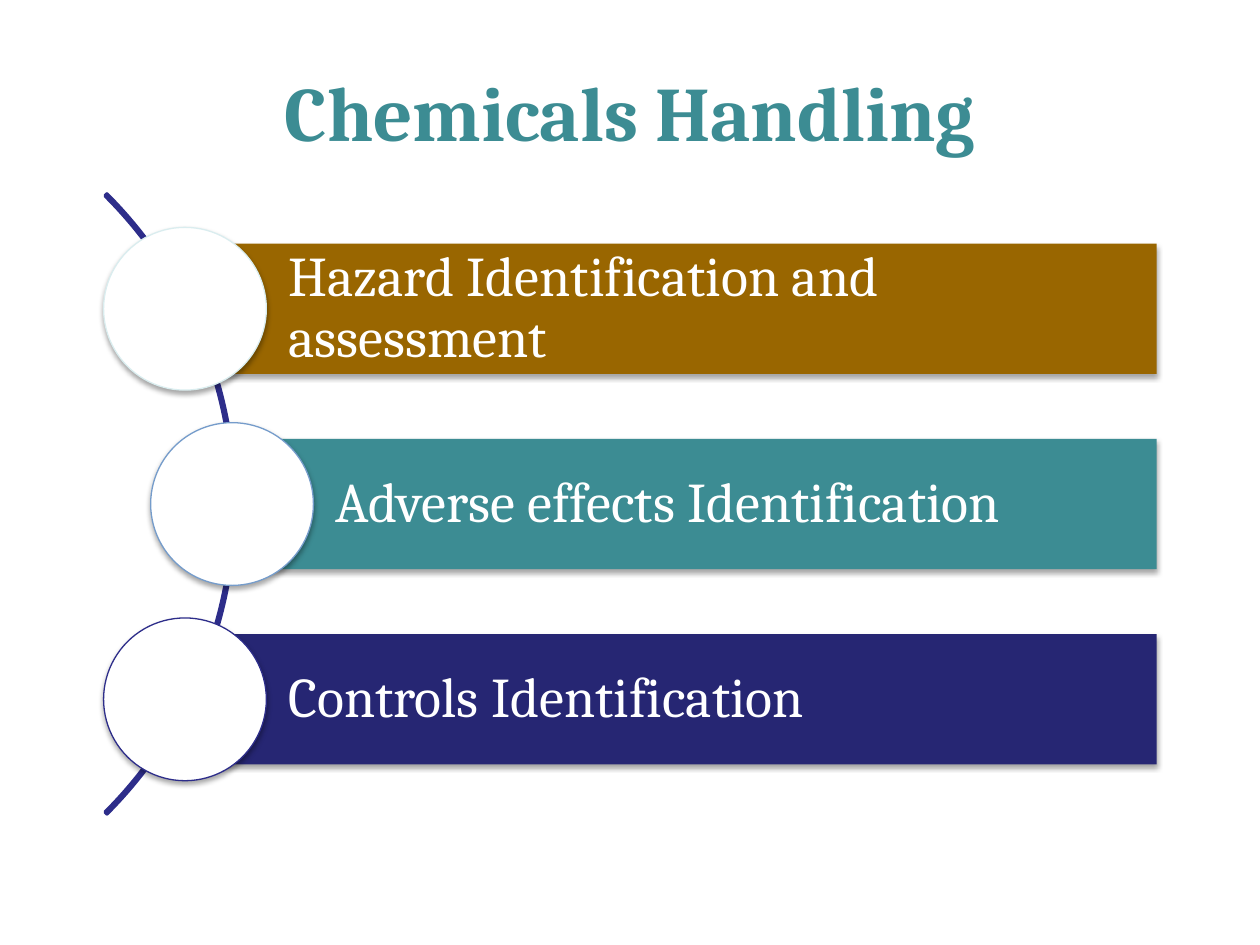
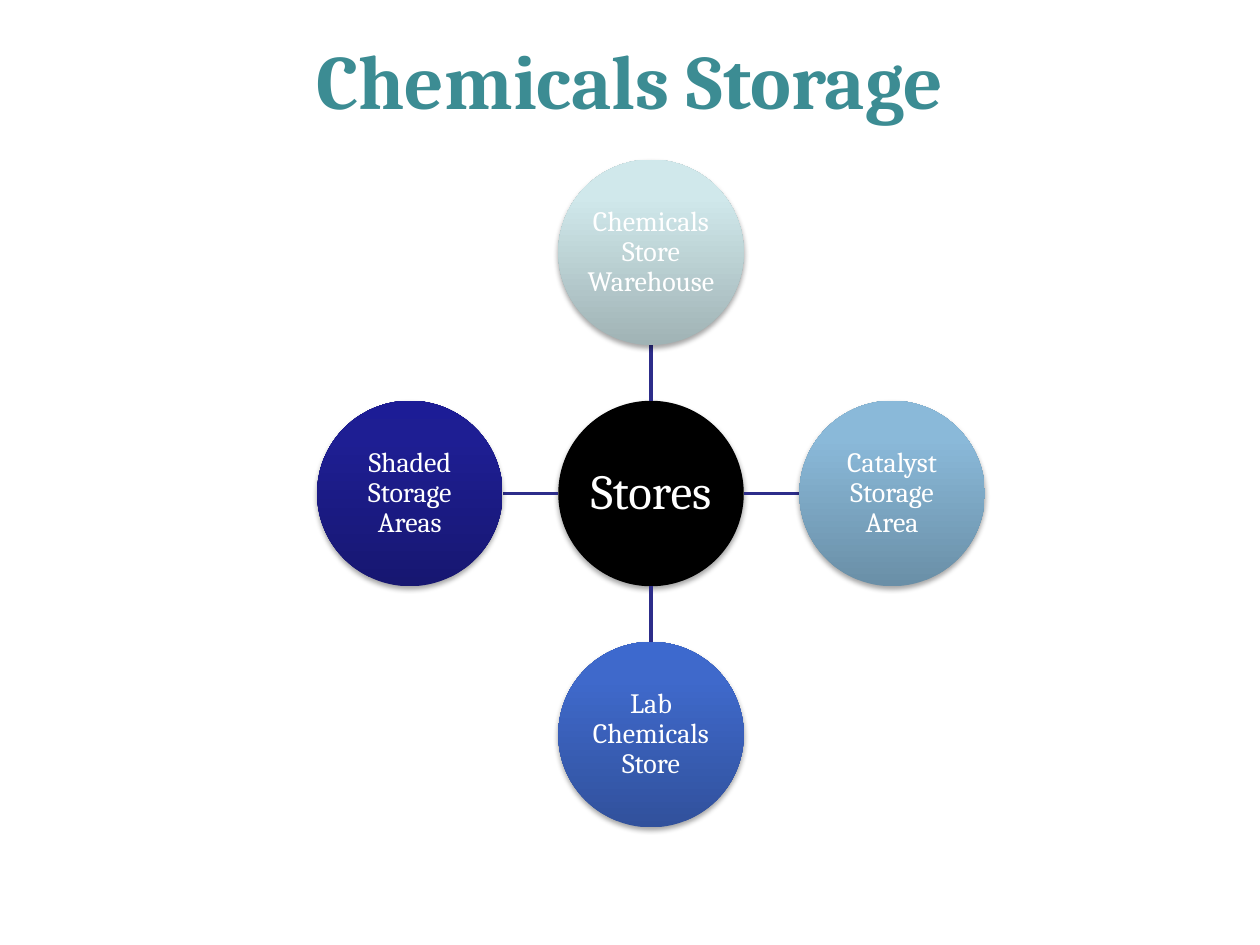
from copy import deepcopy
from dataclasses import dataclass

from lxml import etree
from pptx import Presentation
from pptx.dml.color import RGBColor
from pptx.enum import shapes, text
from pptx.oxml.ns import qn
from pptx.util import Pt


@dataclass(frozen=True)
class Theme:
    font: str = "Cambria"
    teal: str = "3C8C93"
    navy: str = "2D2D8A"
    white: str = "FFFFFF"
    black: str = "000000"
    title_size: float = 44
    bar_size: float = 32
    hub_size: float = 28
    node_size: float = 16
    line_width: float = 2
    outline_width: float = 0.75


@dataclass(frozen=True)
class Step:
    label: str
    left: float
    fill: str
    outline: str


@dataclass(frozen=True)
class Store:
    label: str
    dx: int
    dy: int
    gradient: tuple[str, str, str]


THEME = Theme()
MIDDLE = text.MSO_ANCHOR.MIDDLE
CENTER = text.PP_ALIGN.CENTER
LEFT = text.PP_ALIGN.LEFT

STEPS = (
    Step("Hazard Identification and assessment", 105.7, "996600", "DAEDEF"),
    Step("Adverse effects Identification", 132.6, THEME.teal, "759CCB"),
    Step("Controls Identification", 105.7, "262673", THEME.navy),
)
ARC_LEFT, ARC_SIZE, ARC_MIDDLE = -366.5, 501, 288
BAR_RIGHT, BAR_HEIGHT, STEP_PITCH, DISC_SIZE = 661, 74.4, 111.6, 93

STORES = (
    Store("Chemicals Store Warehouse", 0, -1, ("A0B3B5", "D0E8EB", "D1EAEC")),
    Store("Catalyst Storage Area", 1, 0, ("6A8FA7", "8AB9D9", "89BADB")),
    Store("Lab Chemicals Store", 0, 1, ("31519C", "3F69CB", "3D69CE")),
    Store("Shaded Storage Areas", -1, 0, ("171771", "1E1E93", "1C1C96")),
)
GRADIENT_POSITIONS = (0, 0.8, 1)
HUB_X, HUB_Y, STORE_SIZE, STORE_PITCH = 372, 282, 106, 137.8


def rgb(color: str) -> RGBColor:
    return RGBColor.from_string(color)


def write(shape, content: str, *, size: float, color: str = THEME.white,
          bold: bool = False, align=CENTER, line_spacing: float | None = None,
          insets: tuple[float, float, float, float] = (7.2, 3.6, 7.2, 3.6)) -> None:
    """Fill the shape with one paragraph; insets run left, top, right, bottom."""
    tf = shape.text_frame
    tf.word_wrap = True
    tf.auto_size = text.MSO_AUTO_SIZE.NONE
    tf.vertical_anchor = MIDDLE
    tf.margin_left, tf.margin_top, tf.margin_right, tf.margin_bottom = map(Pt, insets)
    p = tf.paragraphs[0]
    p.alignment = align
    p.line_spacing = line_spacing
    r = p.add_run()
    r.text = content
    r.font.name = THEME.font
    r.font.size = Pt(size)
    r.font.bold = bold
    r.font.color.rgb = rgb(color)


def add_titled_slide(prs, title: str, top: float, height: float):
    s = prs.slides.add_slide(prs.slide_layouts[5])
    sp = s.shapes.title
    sp.left, sp.top, sp.width, sp.height = Pt(54), Pt(top), Pt(612), Pt(height)
    write(sp, title, size=THEME.title_size, color=THEME.teal, bold=True)
    return s


def add_shadow(shape) -> None:
    shape.shadow.inherit = False
    effects = shape._element.spPr.find(qn("a:effectLst"))
    shadow = etree.SubElement(effects, qn("a:outerShdw"), blurRad=str(Pt(3.1)),
                              dist=str(Pt(1.8)), dir="5400000", rotWithShape="0")
    color = etree.SubElement(shadow, qn("a:srgbClr"), val=THEME.black)
    etree.SubElement(color, qn("a:alpha"), val="35000")


def fill_gradient(shape, colors: tuple[str, ...]) -> None:
    """Run the colours from the bottom of the shape to its top."""
    shape.fill.gradient()
    shape.fill.gradient_angle = 90
    stop_list = shape._element.spPr.find(".//" + qn("a:gsLst"))
    stop_list.append(deepcopy(stop_list[-1]))
    for stop, color, position in zip(shape.fill.gradient_stops, colors, GRADIENT_POSITIONS):
        stop.color.rgb = rgb(color)
        stop.position = position


def add_raised(s, kind, left: float, top: float, width: float, height: float,
               fill: str | tuple[str, ...], outline: str | None = None):
    """Add a shadowed shape; a tuple of colours makes a gradient."""
    sp = s.shapes.add_shape(kind, Pt(left), Pt(top), Pt(width), Pt(height))
    if isinstance(fill, tuple):
        fill_gradient(sp, fill)
    else:
        sp.fill.solid()
        sp.fill.fore_color.rgb = rgb(fill)
    if outline:
        sp.line.color.rgb = rgb(outline)
        sp.line.width = Pt(THEME.outline_width)
    else:
        sp.line.fill.background()
    add_shadow(sp)
    return sp


def add_disc(s, x: float, y: float, size: float, fill: str | tuple[str, ...],
             outline: str | None = None):
    """Add a circle centred on x, y."""
    return add_raised(s, shapes.MSO_SHAPE.OVAL, x - size / 2, y - size / 2,
                      size, size, fill, outline)


def add_arc(s) -> None:
    arc = s.shapes.add_shape(shapes.MSO_SHAPE.BLOCK_ARC, Pt(ARC_LEFT),
                             Pt(ARC_MIDDLE - ARC_SIZE / 2), Pt(ARC_SIZE), Pt(ARC_SIZE))
    for i, value in enumerate((189, 27, 0.003)):
        arc.adjustments[i] = value
    arc.fill.background()
    arc.line.color.rgb = rgb(THEME.navy)
    arc.line.width = Pt(THEME.line_width)
    arc.shadow.inherit = False


def add_step(s, step: Step, y: float) -> None:
    bar = add_raised(s, shapes.MSO_SHAPE.RECTANGLE, step.left, y - BAR_HEIGHT / 2,
                     BAR_RIGHT - step.left, BAR_HEIGHT, step.fill)
    write(bar, step.label, size=THEME.bar_size, align=LEFT, line_spacing=0.9,
          insets=(59, 6.4, 6.4, 6.4))
    add_disc(s, step.left, y, DISC_SIZE, THEME.white, step.outline)


def add_link(s, store: Store) -> None:
    """Join the hub's edge to the edge of the store's circle."""
    near, far = STORE_SIZE / 2, STORE_PITCH - STORE_SIZE / 2
    link = s.shapes.add_connector(
        shapes.MSO_CONNECTOR.STRAIGHT,
        Pt(HUB_X + store.dx * near), Pt(HUB_Y + store.dy * near),
        Pt(HUB_X + store.dx * far), Pt(HUB_Y + store.dy * far))
    link.line.color.rgb = rgb(THEME.navy)
    link.line.width = Pt(THEME.line_width)
    etree.SubElement(link._element.spPr, qn("a:effectLst"))


def add_store(s, store: Store) -> None:
    add_link(s, store)
    disc = add_disc(s, HUB_X + store.dx * STORE_PITCH, HUB_Y + store.dy * STORE_PITCH,
                    STORE_SIZE, store.gradient)
    write(disc, store.label, size=THEME.node_size, line_spacing=0.9, insets=(0.8,) * 4)


def build_handling(prs) -> None:
    s = add_titled_slide(prs, "Chemicals Handling", 18, 90)
    add_arc(s)
    for i, step in enumerate(STEPS):
        add_step(s, step, ARC_MIDDLE + (i - 1) * STEP_PITCH)


def build_storage(prs) -> None:
    s = add_titled_slide(prs, "Chemicals Storage", 12, 66)
    hub = add_disc(s, HUB_X, HUB_Y, STORE_SIZE, THEME.black)
    write(hub, "Stores", size=THEME.hub_size, line_spacing=0.9, insets=(1.4,) * 4)
    for store in STORES:
        add_store(s, store)


def main() -> None:
    prs = Presentation()
    prs.slide_width, prs.slide_height = Pt(720), Pt(540)
    build_handling(prs)
    build_storage(prs)
    prs.save("out.pptx")


if __name__ == "__main__":
    main()
